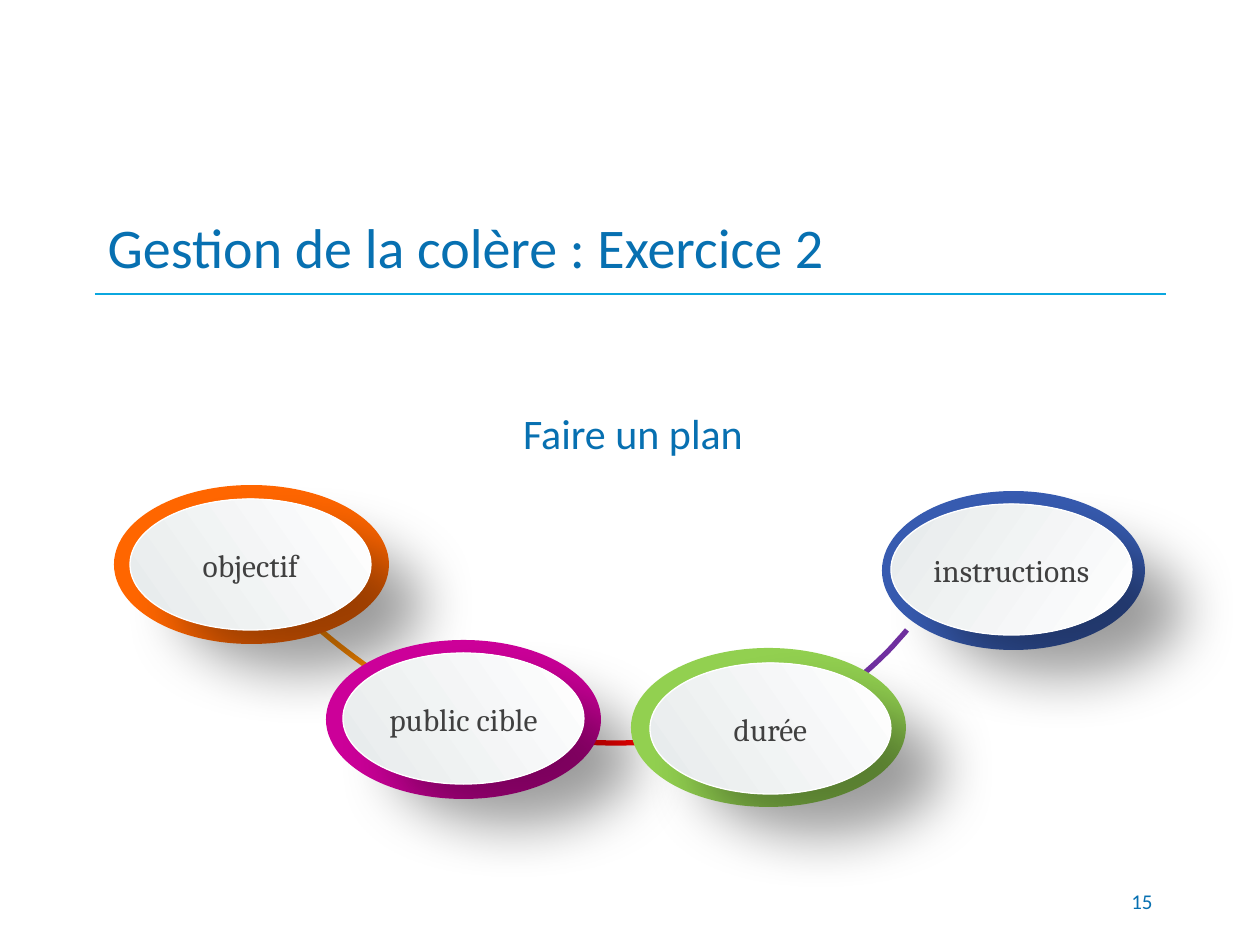
from dataclasses import dataclass

from lxml.etree import SubElement
from pptx import Presentation
from pptx.dml.color import RGBColor
from pptx.enum.shapes import MSO_CONNECTOR, MSO_SHAPE
from pptx.enum.text import MSO_ANCHOR, MSO_AUTO_SIZE, PP_ALIGN
from pptx.oxml.ns import qn
from pptx.util import Emu, Inches, Pt

PX_PER_INCH = 126


@dataclass(frozen=True)
class Theme:
    heading_font: str = "Calibri"
    label_font: str = "Cambria"
    title_size: int = 32
    subtitle_size: int = 24
    label_size: int = 18
    number_size: int = 12
    blue: str = "0770B1"
    rule: str = "0BA7DF"
    label: str = "404040"
    grey: str = "E6EAEB"
    white: str = "FFFFFF"
    black: str = "000000"
    purple: str = "7030A0"
    red: str = "FF0000"
    amber: str = "FF8A00"
    navy: str = "375BB0"
    orange: str = "FF6600"
    magenta: str = "CC0099"
    green: str = "92D050"


def px(length):
    return Emu(round(length * Inches(1) / PX_PER_INCH))


def rgb(value):
    return RGBColor.from_string(value)


def bezier(p0, p1, p2, p3, steps=12):
    """Points along a cubic curve, without its start."""
    for step in range(1, steps + 1):
        t = step / steps
        u = 1 - t
        yield tuple(u**3 * a + 3 * u * u * t * b + 3 * u * t * t * c + t**3 * d
                    for a, b, c, d in zip(p0, p1, p2, p3))


class SlideBuilder:
    def __init__(self, slide, theme):
        self.slide = slide
        self.theme = theme

    def set_text(self, shape, text, size, color, font, align, anchor=MSO_ANCHOR.MIDDLE):
        frame = shape.text_frame
        frame.word_wrap = True
        frame.vertical_anchor = anchor
        paragraph = frame.paragraphs[0]
        paragraph.text = text
        paragraph.alignment = align
        paragraph.font.name = font
        paragraph.font.size = Pt(size)
        paragraph.font.color.rgb = rgb(color)
        return paragraph

    def title(self, text, x, y, w, h):
        heading = self.slide.shapes.title
        heading.left, heading.top, heading.width, heading.height = map(px, (x, y, w, h))
        self.set_text(heading, text, self.theme.title_size, self.theme.blue,
                      self.theme.heading_font, PP_ALIGN.LEFT)

    def text(self, text, x, y, w, h, size, align, anchor):
        box = self.slide.shapes.add_textbox(*map(px, (x, y, w, h)))
        return box.text_frame, self.set_text(box, text, size, self.theme.blue,
                                             self.theme.heading_font, align, anchor)

    def rule(self, x1, y1, x2, y2):
        line = self.slide.shapes.add_connector(
            MSO_CONNECTOR.STRAIGHT, *map(px, (x1, y1, x2, y2)))
        line.line.color.rgb = rgb(self.theme.rule)
        line.line.width = Pt(0.75)
        SubElement(line._element.spPr, qn("a:effectLst"))

    def curve(self, color, start, *segments):
        points = []
        begin = start
        for segment in segments:
            points += bezier(begin, *segment)
            begin = segment[-1]
        builder = self.slide.shapes.build_freeform(*map(px, start))
        builder.add_line_segments([tuple(map(px, point)) for point in points], close=False)
        link = builder.convert_to_shape()
        link.fill.background()
        link.line.color.rgb = rgb(color)
        link.line.width = Pt(3)
        link.shadow.inherit = False

    def ellipse(self, x, y, w, h):
        oval = self.slide.shapes.add_shape(MSO_SHAPE.OVAL, *map(px, (x, y, w, h)))
        oval.shadow.inherit = False
        return oval

    def drop_shadow(self, shape):
        effects = shape._element.spPr.find(qn("a:effectLst"))
        shadow = SubElement(effects, qn("a:outerShdw"), blurRad=str(Pt(33)),
                            dist=str(Pt(36.7)), dir=str(39 * 60000),
                            algn="tl", rotWithShape="0")
        color = SubElement(shadow, qn("a:srgbClr"), val=self.theme.black)
        SubElement(color, qn("a:alpha"), val="38000")

    def bubble(self, label, color, ring_at, ring_width, face_at, angle=35):
        ring = self.ellipse(*ring_at, ring_width, 159)
        ring.fill.solid()
        ring.fill.fore_color.rgb = rgb(color)
        ring.line.fill.background()

        face = self.ellipse(*face_at, 241, 131)
        face.fill.gradient()
        face.fill.gradient_angle = angle
        for stop, position, shade in zip(face.fill.gradient_stops, (0, 1),
                                         (self.theme.grey, self.theme.white)):
            stop.position = position
            stop.color.rgb = rgb(shade)
        face.line.color.rgb = rgb(self.theme.white)
        face.line.width = Pt(0)
        self.drop_shadow(face)

        frame = face.text_frame
        frame.margin_left = frame.margin_right = frame.margin_top = frame.margin_bottom = 0
        self.set_text(face, label, self.theme.label_size, self.theme.label,
                      self.theme.label_font, PP_ALIGN.CENTER)


def main():
    theme = Theme()
    deck = Presentation()
    deck.slide_width, deck.slide_height = Inches(10), Inches(7.5)
    page = SlideBuilder(deck.slides.add_slide(deck.slide_layouts[5]), theme)

    # Heading and page number
    page.rule(95, 294, 1166, 294)
    page.title("Gestion de la colère : Exercice 2", 95, 199, 1071, 95)
    page.text("15", 903, 876, 262, 50, theme.number_size, PP_ALIGN.RIGHT, MSO_ANCHOR.MIDDLE)

    # Instructions, with its link to the duration
    page.curve(theme.purple, (907, 630),
               ((903, 635), (898, 640), (893, 646)),
               ((877, 663), (859, 678), (842, 692)))
    page.curve(theme.purple, (842, 692), ((819, 707), (795, 719), (770, 730)))
    page.bubble("instructions", theme.navy, (882, 491), 263, (891, 504), angle=325)

    # Links between the other steps
    page.curve(theme.red, (566, 741),
               ((593, 743), (621, 744), (648, 742)),
               ((663, 742), (677, 740), (690, 738)))
    page.curve(theme.amber, (311, 622), ((338, 646), (370, 670), (406, 692)))

    # Remaining steps of the plan
    page.bubble("objectif", theme.orange, (114, 485), 275, (130, 499))
    page.bubble("public cible", theme.magenta, (326, 640), 275, (343, 653))
    page.bubble("durée", theme.green, (631, 648), 275, (650, 663))

    # Plan heading
    frame, plan = page.text("Faire un plan", 326, 394, 614, 71, theme.subtitle_size,
                            PP_ALIGN.CENTER, MSO_ANCHOR.TOP)
    frame.auto_size = MSO_AUTO_SIZE.SHAPE_TO_FIT_TEXT
    plan.line_spacing = 1.15
    plan.space_after = Pt(6)

    deck.save("out.pptx")


if __name__ == "__main__":
    main()
